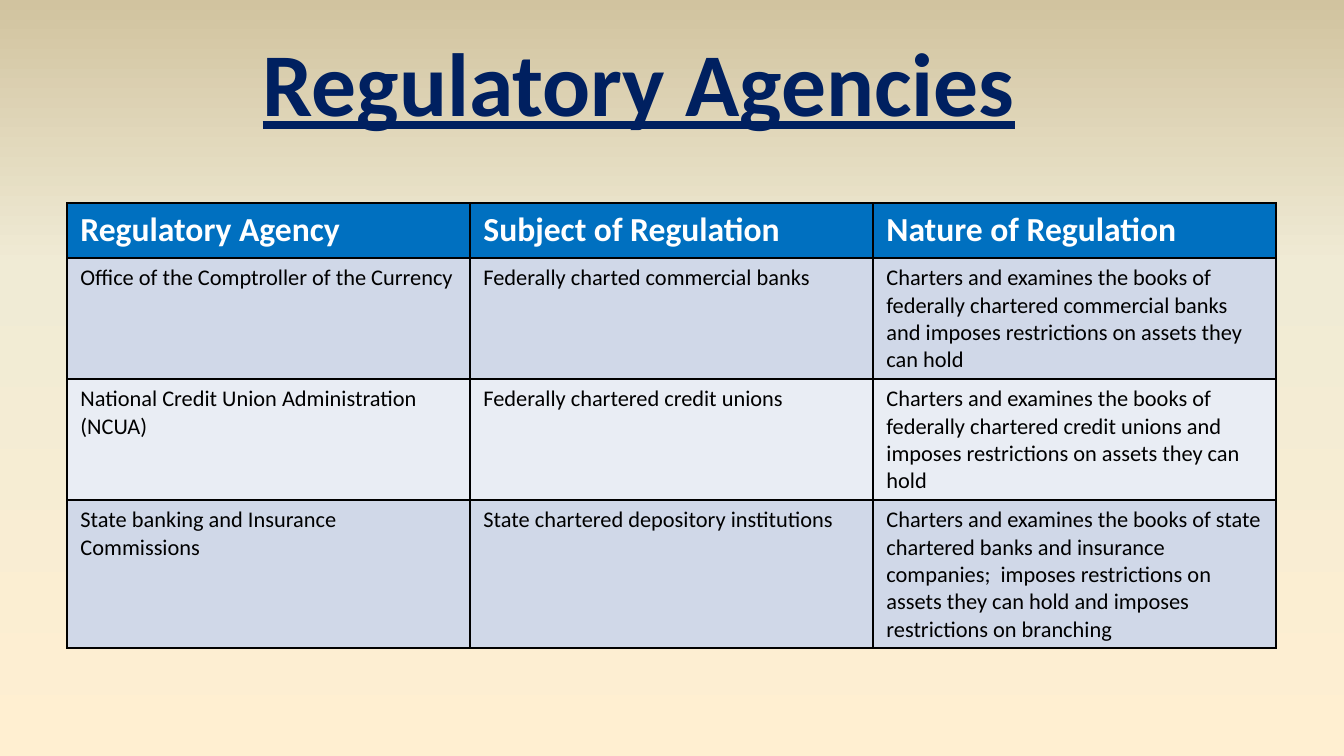
"""Build a slide with a table of regulatory agencies."""
from lxml.etree import SubElement
from pptx import Presentation
from pptx.dml.color import RGBColor
from pptx.enum.text import MSO_AUTO_SIZE, PP_ALIGN
from pptx.oxml.ns import qn
from pptx.util import Emu, Pt

TITLE = "Regulatory Agencies"
AGENCIES = [
    ("Regulatory Agency", "Subject of Regulation", "Nature of Regulation"),
    ("Office of the Comptroller of the Currency",
     "Federally charted commercial banks",
     "Charters and examines the books of federally chartered commercial banks "
     "and imposes restrictions on assets they can hold"),
    ("National Credit Union Administration (NCUA)",
     "Federally chartered credit unions",
     "Charters and examines the books of federally chartered credit unions "
     "and imposes restrictions on assets they can hold"),
    ("State banking and Insurance Commissions",
     "State chartered depository institutions",
     "Charters and examines the books of state chartered banks and insurance "
     "companies;  imposes restrictions on assets they can hold and imposes "
     "restrictions on branching"),
]

NAVY = RGBColor(0x00, 0x20, 0x60)
BLUE = RGBColor(0x00, 0x70, 0xC0)
WHITE = RGBColor(0xFF, 0xFF, 0xFF)
BLACK = RGBColor(0x00, 0x00, 0x00)
BANDS = [RGBColor(0xE9, 0xED, 0xF4), RGBColor(0xD0, 0xD8, 0xE8)]
BACKDROP = [
    (0, RGBColor(0xFF, 0xEF, 0xD1)),
    (65, RGBColor(0xF0, 0xEB, 0xD5)),
    (100, RGBColor(0xD1, 0xC3, 0x9F)),
]

FONT = "Calibri"
SLIDE_SIZE = (1344, 756)
TITLE_BOX = (245, 20, 788, 122)
TABLE_LEFT, TABLE_TOP = 67, 203
COLUMN_WIDTH = 403
ROW_HEIGHTS = [55, 121, 121, 148]


def px(length):
    return Emu(round(length * 914400 / 134.4))


def style(paragraph, size, color, bold):
    font = paragraph.runs[0].font
    font.name, font.size, font.bold = FONT, Pt(size), bold
    font.color.rgb = color
    return font


def paint_backdrop(slide):
    fill = slide.background.fill
    fill.gradient()
    fill.gradient_angle = 90
    stops = slide.element.find(".//" + qn("a:gsLst"))
    for stop in list(stops):
        stops.remove(stop)
    for percent, color in BACKDROP:
        stop = SubElement(stops, qn("a:gs"), pos=str(percent * 1000))
        SubElement(stop, qn("a:srgbClr"), val=str(color))


def add_title(slide):
    heading = slide.shapes.add_textbox(*map(px, TITLE_BOX))
    frame = heading.text_frame
    frame.text = TITLE
    frame.word_wrap = False
    frame.auto_size = MSO_AUTO_SIZE.SHAPE_TO_FIT_TEXT
    frame.paragraphs[0].alignment = PP_ALIGN.CENTER
    style(frame.paragraphs[0], 48, NAVY, True).underline = True


def add_borders(cell):
    properties = cell._tc.get_or_add_tcPr()
    for side in ("lnL", "lnR", "lnT", "lnB"):
        line = SubElement(properties, qn(f"a:{side}"), w=str(Pt(1)))
        solid = SubElement(line, qn("a:solidFill"))
        SubElement(solid, qn("a:srgbClr"), val=str(BLACK))


def add_agencies(slide):
    columns = len(AGENCIES[0])
    table = slide.shapes.add_table(
        len(AGENCIES), columns, px(TABLE_LEFT), px(TABLE_TOP),
        px(COLUMN_WIDTH * columns), px(sum(ROW_HEIGHTS))).table
    for column in table.columns:
        column.width = px(COLUMN_WIDTH)
    for r, (agency, height) in enumerate(zip(AGENCIES, ROW_HEIGHTS)):
        table.rows[r].height = px(height)
        header = r == 0
        for c, entry in enumerate(agency):
            cell = table.cell(r, c)
            cell.text_frame.text = entry
            style(cell.text_frame.paragraphs[0], 18 if header else 12,
                  WHITE if header else BLACK, header)
            add_borders(cell)
            cell.fill.solid()
            cell.fill.fore_color.rgb = BLUE if header else BANDS[r % 2]


def main():
    deck = Presentation()
    deck.slide_width, deck.slide_height = map(px, SLIDE_SIZE)
    slide = deck.slides.add_slide(deck.slide_layouts[6])
    paint_backdrop(slide)
    add_title(slide)
    add_agencies(slide)
    deck.save("out.pptx")


if __name__ == "__main__":
    main()
